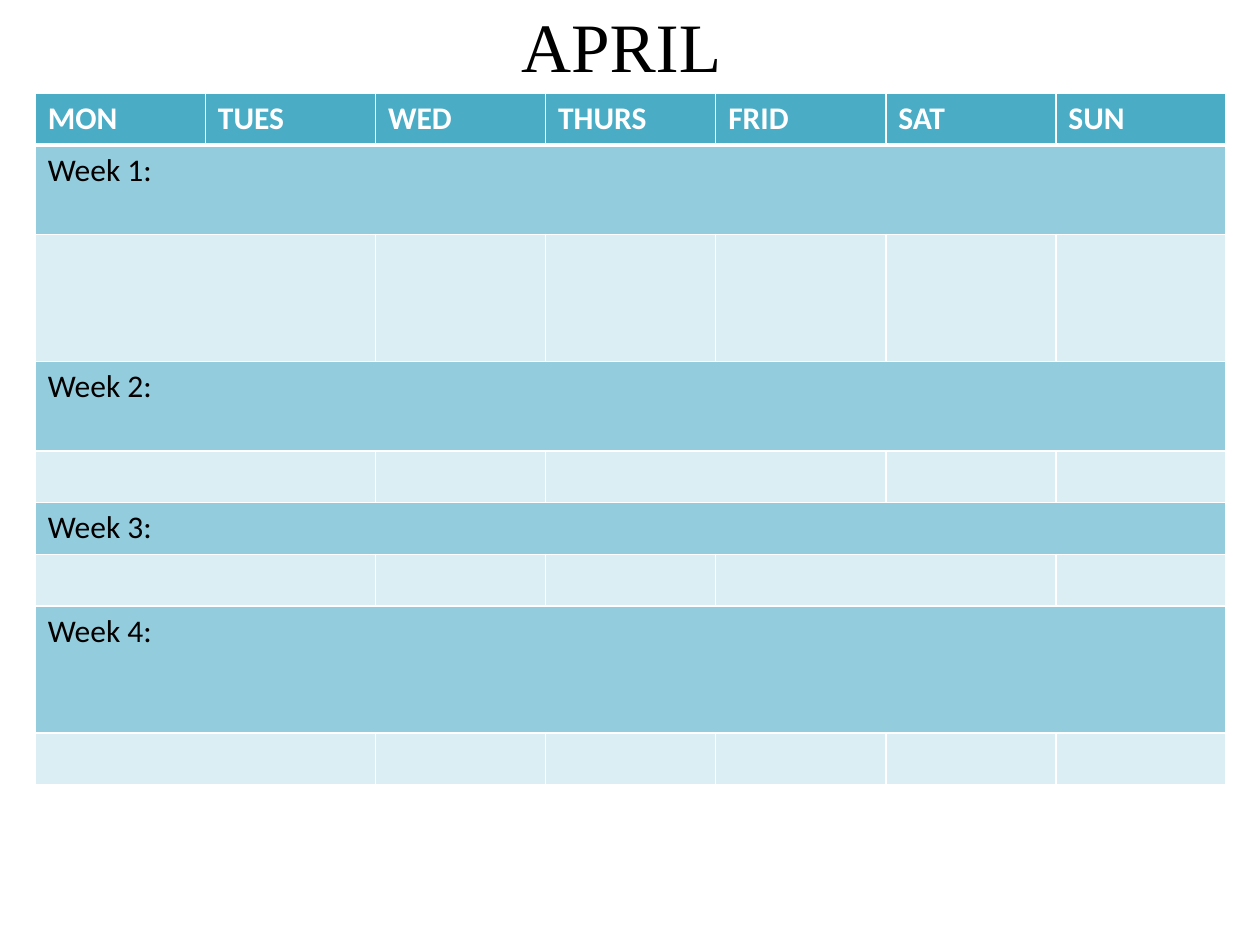
"""Build a one-page April calendar slide with a weekly planning table."""
import pptx
import pptx.dml.color
import pptx.enum.text
import pptx.oxml
import pptx.oxml.ns
import pptx.util
from pptx.util import Inches

DAYS = ["MON", "TUES", "WED", "THURS", "FRID", "SAT", "SUN"]
WEEKS = [
    {"label_height": 0.71, "days_height": 1.01, "joined_days": [(0, 1)]},
    {"label_height": 0.71, "days_height": 0.41, "joined_days": [(0, 1), (3, 4)]},
    {"label_height": 0.41, "days_height": 0.41, "joined_days": [(0, 1), (4, 5)]},
    {"label_height": 1.01, "days_height": 0.41, "joined_days": [(0, 1)]},
]
HEADER_HEIGHT = 0.41
WHITE, BLACK = "FFFFFF", "000000"
HEADER_FILL, WEEK_FILL, DAY_FILL = "4BACC6", "93CDDD", "DBEEF4"


def color(hex_value):
    """Return an RGB colour from a hex string."""
    return pptx.dml.color.RGBColor.from_string(hex_value)


def write(frame, text, size=18, font="Calibri", hex_color=BLACK, bold=False, align=None):
    """Put one formatted paragraph in a text frame."""
    paragraph = frame.paragraphs[0]
    paragraph.alignment = align
    run = paragraph.add_run()
    run.text = text
    run.font.size = pptx.util.Pt(size)
    run.font.name = font
    run.font.bold = bold
    run.font.color.rgb = color(hex_color)


def style_cell(cell, fill, bottom_width=1):
    """Give a cell white borders and a solid fill."""
    properties = cell._tc.get_or_add_tcPr()
    for side, width in (("L", 1), ("R", 1), ("T", 1), ("B", bottom_width)):
        properties.append(pptx.oxml.parse_xml(
            f'<a:ln{side} {pptx.oxml.ns.nsdecls("a")} w="{pptx.util.Pt(width)}">'
            f'<a:solidFill><a:srgbClr val="{WHITE}"/></a:solidFill></a:ln{side}>'))
    cell.fill.solid()
    cell.fill.fore_color.rgb = color(fill)


def add_title(slide, left, top, width, height):
    """Place the centred month name in the given box."""
    title = slide.shapes.add_textbox(left, top, width, height)
    title.text_frame.word_wrap = True
    title.text_frame.vertical_anchor = pptx.enum.text.MSO_ANCHOR.MIDDLE
    write(title.text_frame, "APRIL", size=39.6, font="Times New Roman",
          align=pptx.enum.text.PP_ALIGN.CENTER)


def add_calendar(slide, left, top, width):
    """Place the weekday header and a label row and day row per week."""
    heights = [HEADER_HEIGHT]
    for week in WEEKS:
        heights += [week["label_height"], week["days_height"]]
    calendar = slide.shapes.add_table(
        len(heights), len(DAYS), left, top, width, Inches(sum(heights))).table
    for column in calendar.columns:
        column.width = int(width / len(DAYS))
    for index, height in enumerate(heights):
        calendar.rows[index].height = Inches(height)
        fill = HEADER_FILL if index == 0 else WEEK_FILL if index % 2 else DAY_FILL
        for cell in calendar.rows[index].cells:
            style_cell(cell, fill, bottom_width=3 if index == 0 else 1)

    for day_index, day in enumerate(DAYS):
        write(calendar.cell(0, day_index).text_frame, day, hex_color=WHITE, bold=True)
    for number, week in enumerate(WEEKS, start=1):
        label_row, day_row = 2 * number - 1, 2 * number
        label = calendar.cell(label_row, 0)
        label.merge(calendar.cell(label_row, len(DAYS) - 1))
        write(label.text_frame, f"Week {number}:")
        for first, last in week["joined_days"]:
            calendar.cell(day_row, first).merge(calendar.cell(day_row, last))


def main():
    """Build and save the slide."""
    presentation = pptx.Presentation()
    presentation.slide_width = Inches(10)
    presentation.slide_height = Inches(7.5)
    slide = presentation.slides.add_slide(presentation.slide_layouts[6])
    add_title(slide, Inches(0.43), Inches(0), Inches(9), Inches(0.71))
    add_calendar(slide, Inches(0.28), Inches(0.74), Inches(9.45))
    presentation.save("out.pptx")


if __name__ == "__main__":
    main()
